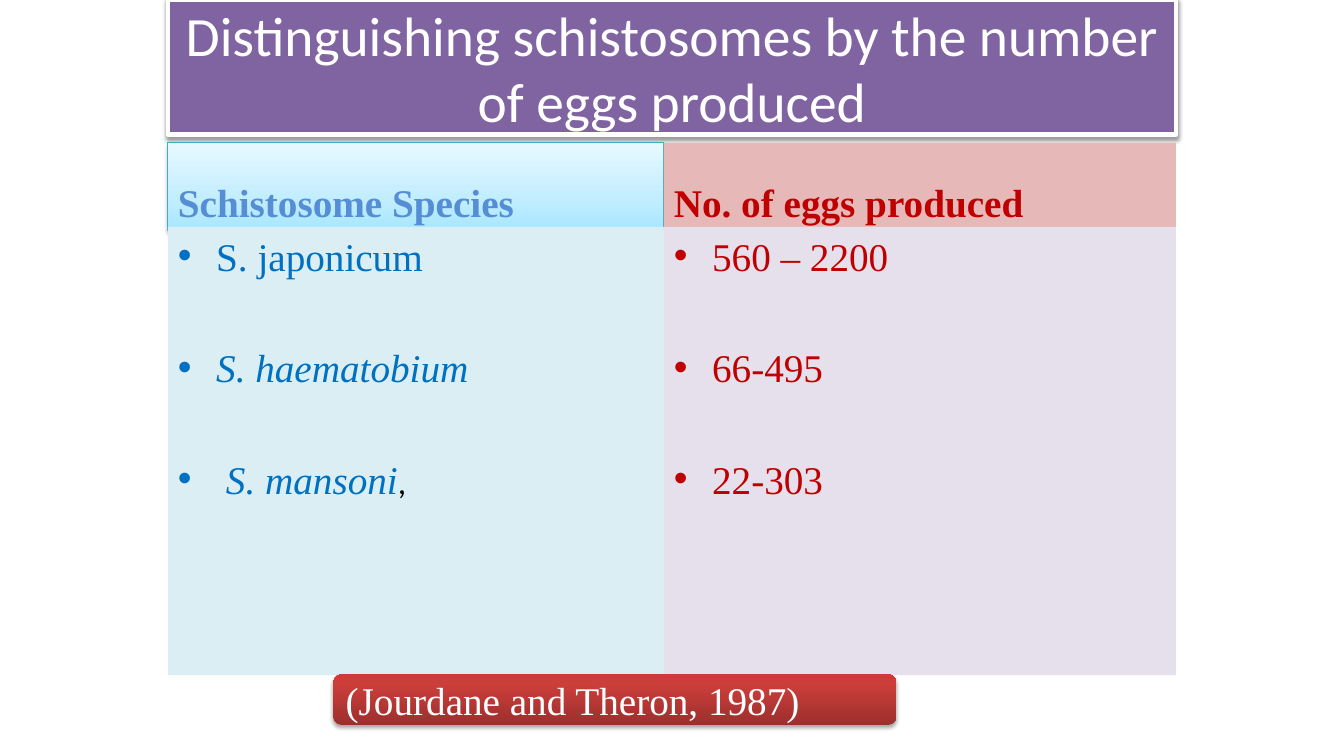
from dataclasses import dataclass
from lxml.etree import SubElement as Sub
from pptx import Presentation
from pptx.dml.color import RGBColor as Rgb
from pptx.enum.shapes import MSO_SHAPE as Kind
from pptx.enum.text import MSO_ANCHOR as Anchor, MSO_AUTO_SIZE as Fit, PP_ALIGN as Align
from pptx.oxml.ns import qn
from pptx.util import Emu, Inches, Pt


@dataclass(frozen=True)
class Theme:
    head: str = "Calibri"
    body: str = "Times New Roman"
    big: float = 39.6
    mid: float = 28
    small: float = 24
    lead: float = 4
    gap: float = 46
    white: str = "FFFFFF"
    black: str = "000000"
    purple: str = "8064A2"
    blue: str = "0070C0"
    sky: str = "558ED5"
    teal: str = "46AAC5"
    red: str = "C00000"
    aqua: str = "DBEEF4"
    rose: str = "E6B9B8"
    lilac: str = "E6E0EC"
    ice: tuple = ((0, "A7E6FF"), (35, "C1EDFF"), (100, "E7F8FF"))
    brick: tuple = ((0, "9C2F2D"), (80, "CB3E3A"), (100, "CE3B37"))


@dataclass(frozen=True)
class Box:
    x: float
    y: float
    w: float
    h: float

    def cut(self, x, y, w, h):
        return Box(self.x + x * self.w, self.y + y * self.h, w * self.w, h * self.h)

    def place(self, shape):
        shape.left, shape.top = Emu(round(self.x)), Emu(round(self.y))
        shape.width, shape.height = Emu(round(self.w)), Emu(round(self.h))


T = Theme()


def blend(shape, stops):
    shape.fill.gradient()
    shape.fill.gradient_angle = 90
    rows = shape._element.spPr.find(qn("a:gradFill")).find(qn("a:gsLst"))
    for old in list(rows):
        rows.remove(old)
    for pos, tint in stops:
        stop = Sub(rows, qn("a:gs"), pos=str(pos * 1000))
        Sub(stop, qn("a:srgbClr"), val=tint)


def shade(shape, alpha, dist):
    effect = shape._element.spPr.find(qn("a:effectLst"))
    cast = Sub(effect, qn("a:outerShdw"), blurRad=str(Pt(3.1)), dist=str(Pt(dist)),
               dir="5400000", rotWithShape="0")
    tint = Sub(cast, qn("a:srgbClr"), val=T.black)
    Sub(tint, qn("a:alpha"), val=str(alpha * 1000))


def style(shape, box, fill, anchor, line=None, width=0):
    box.place(shape)
    shape.shadow.inherit = False
    if isinstance(fill, str):
        shape.fill.solid()
        shape.fill.fore_color.rgb = Rgb.from_string(fill)
    else:
        blend(shape, fill)
    if line:
        shape.line.color.rgb = Rgb.from_string(line)
        shape.line.width = Pt(width)
    else:
        shape.line.fill.background()
    frame = shape.text_frame
    frame.word_wrap = True
    frame.auto_size = Fit.NONE
    frame.vertical_anchor = anchor
    frame.paragraphs[0].alignment = Align.LEFT
    return frame


def panel(slide, box, fill, anchor, kind=Kind.RECTANGLE, line=None, width=0):
    shape = slide.shapes.add_shape(kind, 0, 0, 0, 0)
    return shape, style(shape, box, fill, anchor, line, width)


def write(para, text, tint, size=T.mid, face=T.body, bold=False, slant=False):
    run = para.add_run()
    run.text = text
    font = run.font
    font.name, font.size, font.bold, font.italic = face, Pt(size), bold, slant
    font.color.rgb = Rgb.from_string(tint)


def bullet(para):
    props = para._p.get_or_add_pPr()
    props.set("marL", str(Inches(0.38)))
    props.set("indent", str(-Inches(0.38)))
    Sub(props, qn("a:buFont"), typeface="Arial")
    Sub(props, qn("a:buChar"), char="•")


def title(slide, box, text):
    shape = slide.shapes.title
    frame = style(shape, box, T.purple, Anchor.MIDDLE, T.white, 3)
    shade(shape, 38, 1.6)
    para = frame.paragraphs[0]
    para.alignment = Align.CENTER
    write(para, text, T.white, T.big, T.head)


def label(slide, box, text, tint, fill, line=None):
    shape, frame = panel(slide, box, fill, Anchor.BOTTOM, line=line, width=0.75)
    if line:
        shade(shape, 38, 1.6)
    write(frame.paragraphs[0], text, tint, bold=True)


def items(slide, box, rows, fill):
    frame = panel(slide, box, fill, Anchor.TOP)[1]
    for at, row in enumerate(rows):
        para = frame.add_paragraph() if at else frame.paragraphs[0]
        para.alignment = Align.LEFT
        para.space_before = Pt(T.gap if at else T.lead)
        bullet(para)
        for text, look in row:
            write(para, text, **look)


def column(slide, box, head, rows, fill):
    label(slide, box.cut(0, 0, 1, 0.165), *head)
    items(slide, box.cut(0, 0.158, 1, 0.842), rows, fill)


def source(slide, box, text):
    shape, frame = panel(slide, box, T.brick, Anchor.MIDDLE, Kind.ROUNDED_RECTANGLE)
    shade(shape, 35, 1.8)
    write(frame.paragraphs[0], text, T.white)


def main():
    deck = Presentation()
    deck.slide_width, deck.slide_height = Inches(13.33), Inches(7.5)
    slide = deck.slides.add_slide(deck.slide_layouts[5])
    page = Box(0, 0, deck.slide_width, deck.slide_height)
    blue, red = {"tint": T.blue}, {"tint": T.red}
    slant = {"tint": T.blue, "slant": True}
    comma = {"tint": T.black, "size": T.small, "face": T.head}
    names = [[("S. japonicum", blue)], [("S. haematobium", slant)],
             [(" ", blue), ("S. mansoni", slant), (",", comma)]]
    eggs = [[(text, red)] for text in ("560 – 2200", "66-495", "22-303")]
    title(slide, page.cut(0.125, 0, 0.75, 0.178),
          "Distinguishing schistosomes by the number of eggs produced")
    body = page.cut(0.125, 0.189, 0.75, 0.704)
    split = 0.492
    column(slide, body.cut(0, 0, split, 1),
           ("Schistosome Species", T.sky, T.ice, T.teal), names, T.aqua)
    column(slide, body.cut(split, 0, 1 - split, 1),
           ("No. of eggs produced", T.red, T.rose), eggs, T.lilac)
    source(slide, page.cut(0.248, 0.892, 0.419, 0.067), "(Jourdane and Theron, 1987)")
    deck.save("out.pptx")


if __name__ == "__main__":
    main()
